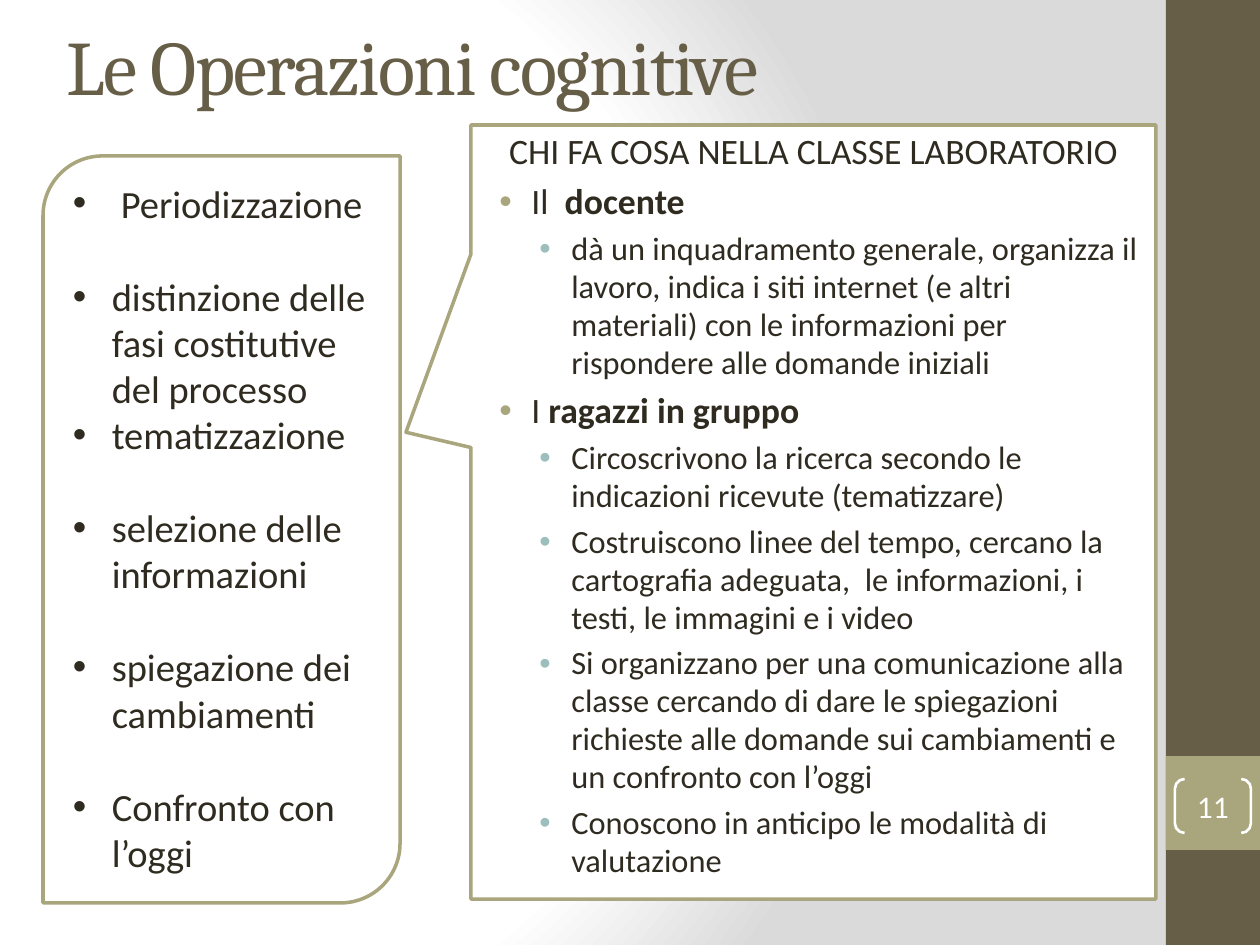
from lxml import etree
from pptx import Presentation
from pptx.dml.color import RGBColor
from pptx.enum.shapes import MSO_SHAPE
from pptx.enum.text import MSO_ANCHOR, PP_ALIGN
from pptx.oxml import parse_xml
from pptx.oxml.ns import qn
from pptx.util import Pt

PX = 914400 // 126
RECT = MSO_SHAPE.RECTANGLE
CALLOUT = MSO_SHAPE.RECTANGULAR_CALLOUT
BRACKETS = MSO_SHAPE.DOUBLE_BRACKET
DIAGONAL = MSO_SHAPE.ROUND_2_DIAG_RECTANGLE
TOP, MIDDLE = MSO_ANCHOR.TOP, MSO_ANCHOR.MIDDLE
LEFT, CENTER = PP_ALIGN.LEFT, PP_ALIGN.CENTER
COLORS = {"brown": "675E47", "olive": "A9A57C", "teal": "9CBEBD",
          "ink": "2F2B20", "white": "FFFFFF", "grey": "DADADA"}

OPERATIONS = [
    ("Periodizzazione", 48, True),
    ("distinzione delle fasi costitutive del processo", 39, False),
    ("tematizzazione", 39, True),
    ("selezione delle informazioni", 39, True),
    ("spiegazione dei cambiamenti", 39, True),
    ("Confronto con l’oggi", 39, False),
]
ROLES = [
    ("Il  ", "docente", [
        "dà un inquadramento generale, organizza il lavoro, indica i siti internet "
        "(e altri materiali) con le informazioni per rispondere alle domande iniziali"]),
    ("I ", "ragazzi in gruppo", [
        "Circoscrivono la ricerca secondo le indicazioni ricevute (tematizzare)",
        "Costruiscono linee del tempo, cercano la cartografia adeguata,  "
        "le informazioni, i testi, le immagini e i video",
        "Si organizzano per una comunicazione alla classe cercando di dare le spiegazioni "
        "richieste alle domande sui cambiamenti e un confronto con l’oggi",
        "Conoscono in anticipo le modalità di valutazione"]),
]


def rgb(name):
    """Return a palette colour."""
    return RGBColor.from_string(COLORS[name])


def set_background(page):
    """Give the page a circular gradient from white to grey."""
    stops = "".join(
        f'<a:gs pos="{pos}"><a:srgbClr val="{COLORS[name]}"/></a:gs>'
        for pos, name in ((0, "white"), (75000, "white"), (100000, "grey")))
    gradient = parse_xml(
        '<a:gradFill xmlns:a="http://schemas.openxmlformats.org/drawingml/2006/main" '
        f'rotWithShape="1"><a:gsLst>{stops}</a:gsLst><a:path path="circle">'
        '<a:fillToRect l="20000" t="50000" r="100000" b="50000"/></a:path></a:gradFill>')
    fill = page.background.fill
    fill.solid()
    solid = page._element.find(".//" + qn("p:bgPr")).find(qn("a:solidFill"))
    solid.getparent().replace(solid, gradient)


def add_box(page, kind, place, fill=None, line=None, width=2, adjust=()):
    """Add a preset shape without shadow."""
    box = page.shapes.add_shape(kind, *(n * PX for n in place))
    box.shadow.inherit = False
    for index, value in enumerate(adjust):
        box.adjustments[index] = value
    if fill:
        box.fill.solid()
        box.fill.fore_color.rgb = rgb(fill)
    else:
        box.fill.background()
    if line:
        box.line.color.rgb = rgb(line)
        box.line.width = Pt(width)
    else:
        box.line.fill.background()
    box.text_frame.word_wrap = True
    box.text_frame.vertical_anchor = TOP
    return box


def add_para(box, text, size, color="ink", font="Calibri", align=LEFT):
    """Write the first free paragraph of a box."""
    frame = box.text_frame
    para = frame.paragraphs[0] if not frame.text else frame.add_paragraph()
    para.text = text
    para.alignment = align
    para.font.size = Pt(size)
    para.font.name = font
    para.font.color.rgb = rgb(color)
    return para


def add_bullet(para, margin, hang, color):
    """Give a paragraph a hanging coloured bullet."""
    props = para._p.get_or_add_pPr()
    props.set("marL", str(margin * PX))
    props.set("indent", str(-hang * PX))
    bullet_color = etree.Element(qn("a:buClr"))
    etree.SubElement(bullet_color, qn("a:srgbClr"), val=COLORS[color])
    bullet_font = etree.Element(qn("a:buFont"), typeface="Arial")
    bullet = etree.Element(qn("a:buChar"), char="•")
    at = list(props).index(props.find(qn("a:defRPr")))
    props[at:at] = [bullet_color, bullet_font, bullet]


def add_title(page):
    """Add the page title."""
    box = page.shapes.add_textbox(*(n * PX for n in (54, 20, 1050, 90)))
    box.text_frame.word_wrap = True
    box.text_frame.vertical_anchor = MIDDLE
    para = add_para(box, "Le Operazioni cognitive", 44, "brown", "Cambria")
    para.runs[0].font._element.set("spc", "-100")


def add_roles(page):
    """Add the callout that says who does what."""
    box = add_box(page, CALLOUT, (471, 125, 685, 774), "white", "olive",
                  adjust=(-0.595, -0.103))
    add_para(box, "CHI FA COSA NELLA CLASSE LABORATORIO", 20.4, align=CENTER)
    for article, role, tasks in ROLES:
        para = add_para(box, article, 20.4)
        span = para.add_run()
        span.text = role
        span.font.bold = True
        add_bullet(para, 48, 32, "olive")
        for task in tasks:
            add_bullet(add_para(box, task, 18.5), 88, 32, "teal")
    for para in box.text_frame.paragraphs:
        para.line_spacing = 0.98
        para.space_before = Pt(4.2)


def add_operations(page):
    """Add the list of operations on the left."""
    box = add_box(page, DIAGONAL, (43, 156, 357, 747), "white", "olive")
    for text, margin, gap_after in OPERATIONS:
        para = add_para(box, text, 22)
        para.space_after = Pt(26.8 if gap_after else 0)
        add_bullet(para, margin, margin, "ink")


def add_page_number(page):
    """Add the page number between brackets."""
    box = add_box(page, BRACKETS, (1175, 779, 76, 54), None, "white", 1.5, (0.179,))
    frame = box.text_frame
    frame.margin_left = frame.margin_right = frame.margin_top = frame.margin_bottom = 0
    frame.vertical_anchor = MIDDLE
    add_para(box, "11", 18, "white", align=CENTER)


def main():
    """Build and save the deck."""
    deck = Presentation()
    deck.slide_width, deck.slide_height = 1260 * PX, 945 * PX
    page = deck.slides.add_slide(deck.slide_layouts[6])
    set_background(page)
    add_box(page, RECT, (1166, 0, 94, 945), "brown")
    add_box(page, RECT, (1166, 756, 94, 94), "olive")
    add_title(page)
    add_roles(page)
    add_page_number(page)
    add_operations(page)
    deck.save("out.pptx")


if __name__ == "__main__":
    main()
